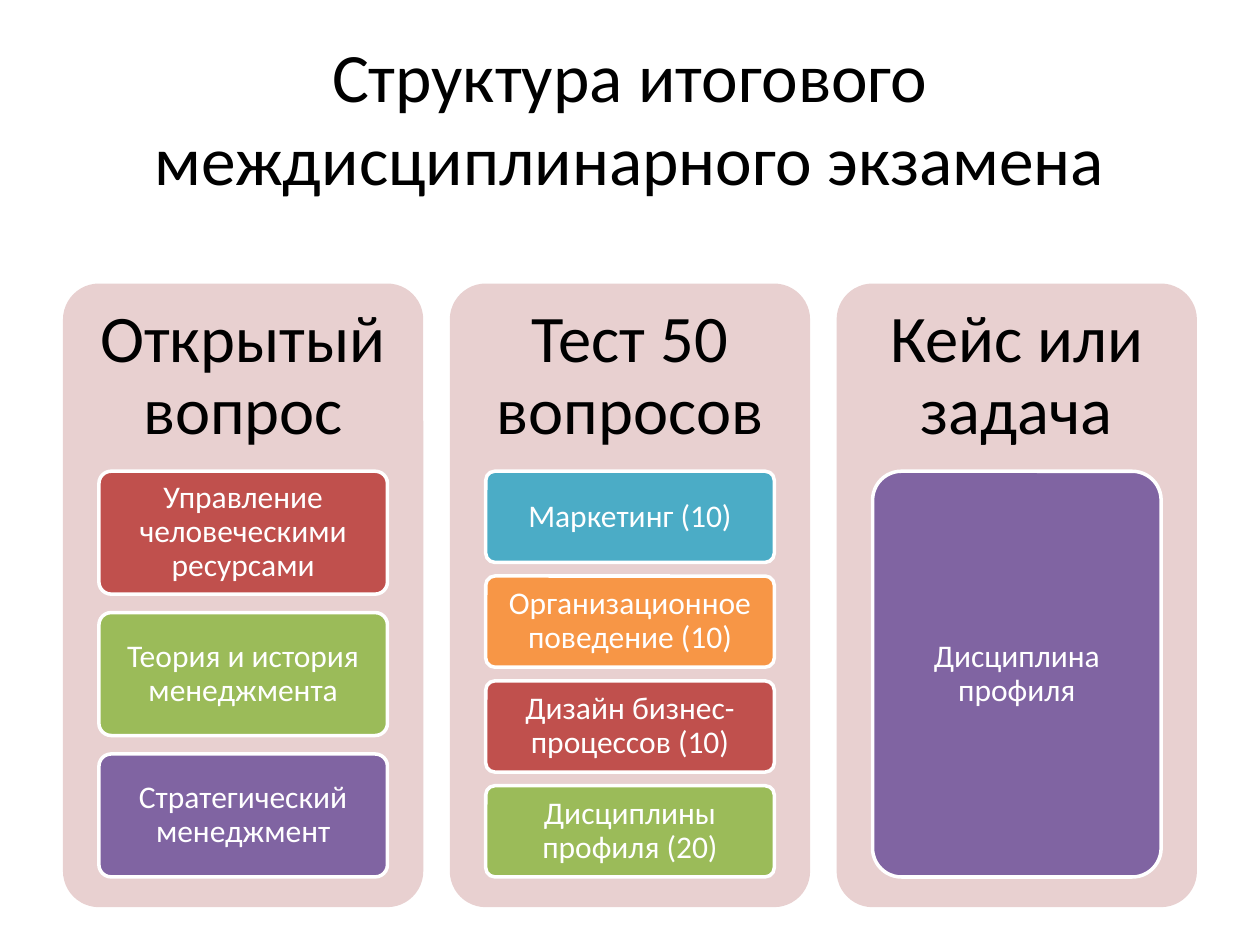
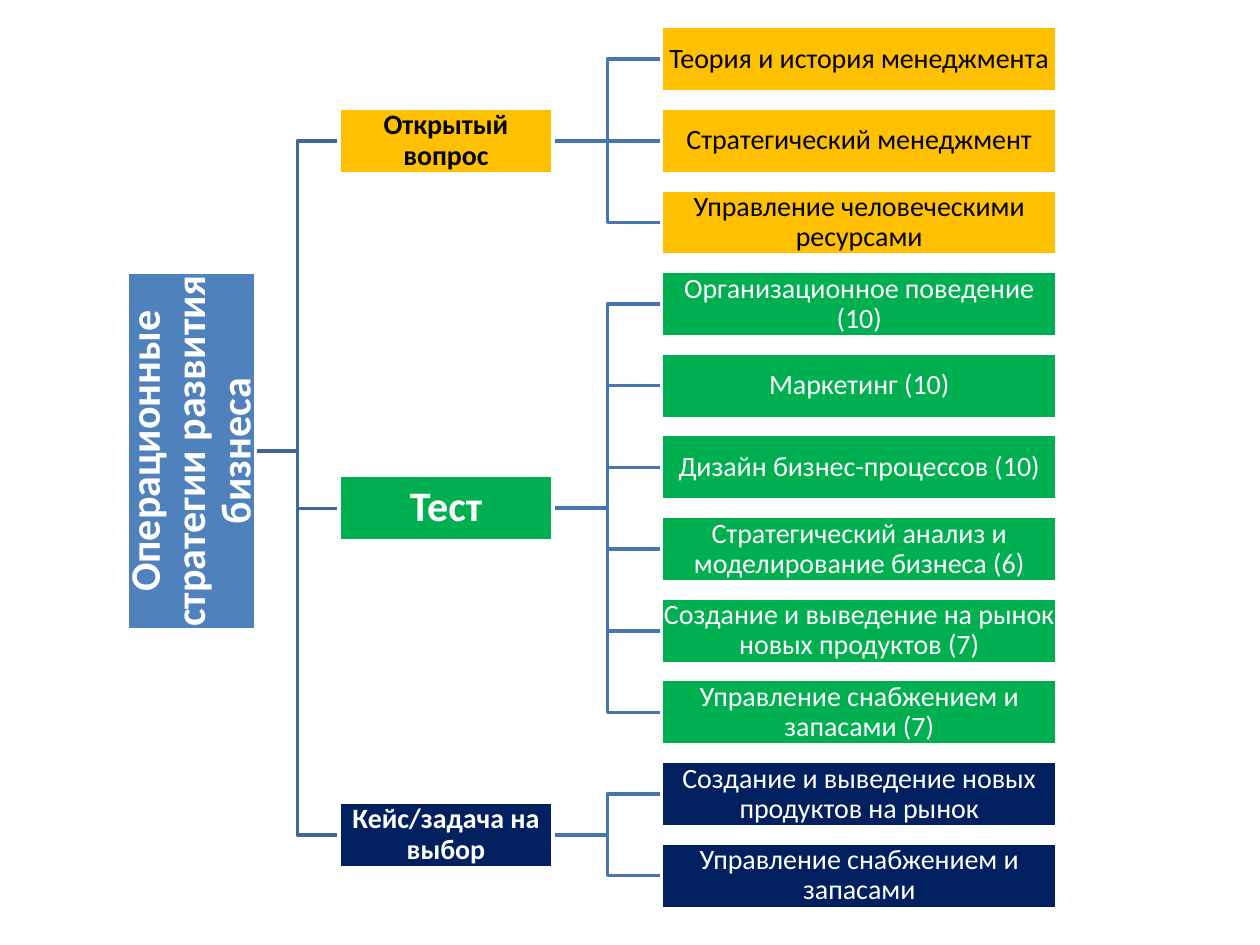
"""Builds two slides on the structure of the final interdisciplinary exam."""
from lxml.etree import SubElement
from pptx import Presentation
from pptx.dml.color import RGBColor
from pptx.enum.shapes import MSO_CONNECTOR as LINE, MSO_SHAPE as SHAPE
from pptx.enum.text import MSO_ANCHOR, PP_ALIGN
from pptx.oxml.ns import qn
from pptx.util import Inches, Pt

FONT = "Calibri"
COLORS = {
    "black": "000000", "white": "FFFFFF", "panel": "E8D0D0",
    "red": "C0504D", "lime": "9BBB59", "purple": "8064A2",
    "aqua": "4BACC6", "orange": "F79646", "blue": "4F81BD",
    "gold": "FFC000", "green": "00B050", "navy": "002060",
    "root_link": "3F6797", "leaf_link": "4875AC",
}
LINE_WIDTH = Pt(2)

EXAM_PARTS = [
    ("Открытый вопрос", [
        ("Управление человеческими ресурсами", "red"),
        ("Теория и история менеджмента", "lime"),
        ("Стратегический менеджмент", "purple")]),
    ("Тест 50 вопросов", [
        ("Маркетинг (10)", "aqua"),
        ("Организационное поведение (10)", "orange"),
        ("Дизайн бизнес-процессов (10)", "red"),
        ("Дисциплины профиля (20)", "lime")]),
    ("Кейс или задача", [("Дисциплина профиля", "purple")]),
]
PROFILE_BRANCHES = [
    ("Открытый вопрос", 16, "gold", "black", [
        "Теория и история менеджмента",
        "Стратегический менеджмент",
        "Управление человеческими ресурсами"]),
    ("Тест", 24, "green", "white", [
        "Организационное поведение (10)",
        "Маркетинг (10)",
        "Дизайн бизнес-процессов (10)",
        "Стратегический анализ и моделирование бизнеса (6)",
        "Создание и выведение на рынок новых продуктов (7)",
        "Управление снабжением и запасами (7)"]),
    ("Кейс/задача на выбор", 16, "navy", "white", [
        "Создание и выведение новых продуктов на рынок",
        "Управление снабжением и запасами"]),
]


def rgb(name):
    """Return the palette colour with this name."""
    return RGBColor.from_string(COLORS[name])


class Deck:
    """Holds the presentation, its style and the current slide."""

    def __init__(self):
        """Start an empty 10 by 7.5 inch presentation."""
        self.presentation = Presentation()
        self.presentation.slide_width = Inches(10)
        self.presentation.slide_height = Inches(7.5)
        self.shapes = None

    def add_slide(self):
        """Start a new blank slide."""
        blank = self.presentation.slide_layouts[6]
        self.shapes = self.presentation.slides.add_slide(blank).shapes

    def set_text(self, holder, text, size, color, insets, bold=False, spacing=0.9):
        """Put centred text into a shape or text box."""
        frame = holder.text_frame
        frame.text = text
        frame.word_wrap = True
        frame.vertical_anchor = MSO_ANCHOR.MIDDLE
        frame.margin_left = frame.margin_right = Inches(insets[0])
        frame.margin_top = frame.margin_bottom = Inches(insets[1])
        paragraph = frame.paragraphs[0]
        paragraph.alignment = PP_ALIGN.CENTER
        paragraph.line_spacing = spacing
        font = paragraph.runs[0].font
        font.name, font.size, font.bold = FONT, Pt(size), bold
        font.color.rgb = rgb(color)

    def label(self, place, text, size, insets, spacing=0.9):
        """Add black text without a box around it."""
        holder = self.shapes.add_textbox(*map(Inches, place))
        self.set_text(holder, text, size, "black", insets, spacing=spacing)

    def block(self, kind, place, fill, outlined=True):
        """Add a filled shape, with a white outline if wanted."""
        shape = self.shapes.add_shape(kind, *map(Inches, place))
        shape.shadow.inherit = False
        shape.fill.solid()
        shape.fill.fore_color.rgb = rgb(fill)
        if outlined:
            shape.line.color.rgb = rgb("white")
            shape.line.width = LINE_WIDTH
        else:
            shape.line.fill.background()
        return shape

    def rounded(self, place, fill, outlined=True):
        """Add a block with slightly rounded corners."""
        shape = self.block(SHAPE.ROUNDED_RECTANGLE, place, fill, outlined)
        shape.adjustments[0] = 0.1
        return shape

    def node(self, place, text, size, fill, color, bold=False):
        """Add a rectangular tree node."""
        shape = self.block(SHAPE.RECTANGLE, place, fill)
        self.set_text(shape, text, size, color, (0.01, 0.01), bold)
        return shape

    def link(self, parent, child, color):
        """Join a parent's right side to a child's left side, behind both."""
        parent_y = parent.top + parent.height // 2
        child_y = child.top + child.height // 2
        level = abs(parent_y - child_y) < Inches(0.01)
        connector = self.shapes.add_connector(
            LINE.STRAIGHT if level else LINE.ELBOW,
            parent.left + parent.width, parent_y, child.left, child_y)
        connector.begin_connect(parent, 3)
        connector.end_connect(child, 1)
        connector.line.color.rgb = rgb(color)
        connector.line.width = LINE_WIDTH
        element = connector.element
        SubElement(element.spPr, qn("a:effectLst"))
        element.getparent().insert(2, element)


def build_exam_structure(deck):
    """Show the three exam parts as panels with stacked topics."""
    deck.add_slide()
    deck.label((0.5, 0.3, 9, 1.25), "Структура итогового междисциплинарного экзамена",
               39.6, (0.1, 0.05), spacing=1.0)
    panel_top, panel_width, panel_pitch = 2.25, 2.86, 3.07
    topic_top, topic_width, stack_height, gap_share = 3.74, 2.29, 3.22, 0.15
    for column, (heading, topics) in enumerate(EXAM_PARTS):
        left = 0.5 + column * panel_pitch
        deck.rounded((left, panel_top, panel_width, 4.95), "panel", outlined=False)
        deck.label((left, panel_top, panel_width, 1.48), heading, 38, (0.16, 0.16))
        count = len(topics)
        height = stack_height / (count + (count - 1) * gap_share)
        topic_left = left + (panel_width - topic_width) / 2
        for row, (topic, fill) in enumerate(topics):
            top = topic_top + row * height * (1 + gap_share)
            box = deck.rounded((topic_left, top, topic_width, height), fill)
            deck.set_text(box, topic, 18, "white", (0.05, 0.04))


def build_profile_tree(deck):
    """Show the exam of one profile as a tree."""
    deck.add_slide()
    first_top, last_top, height = 0.21, 6.69, 0.52
    leaf_count = sum(len(branch[-1]) for branch in PROFILE_BRANCHES)
    pitch = (last_top - first_top) / (leaf_count - 1)
    root = deck.node((1.01, 2.16, 1.02, 2.84), "Операционные стратегии развития бизнеса",
                     24, "blue", "white", bold=True)
    root.element.txBody.find(qn("a:bodyPr")).set("vert", "vert270")
    top = first_top
    for heading, size, fill, color, topics in PROFILE_BRANCHES:
        branch_top = top + (len(topics) - 1) * pitch / 2
        branch = deck.node((2.69, branch_top, 1.7, height), heading, size, fill, color, bold=True)
        deck.link(root, branch, "root_link")
        for topic in topics:
            leaf = deck.node((5.25, top, 3.14, height), topic, 16, fill, color)
            deck.link(branch, leaf, "leaf_link")
            top += pitch


def main():
    """Build both slides and save them."""
    deck = Deck()
    build_exam_structure(deck)
    build_profile_tree(deck)
    deck.presentation.save("out.pptx")


if __name__ == "__main__":
    main()
